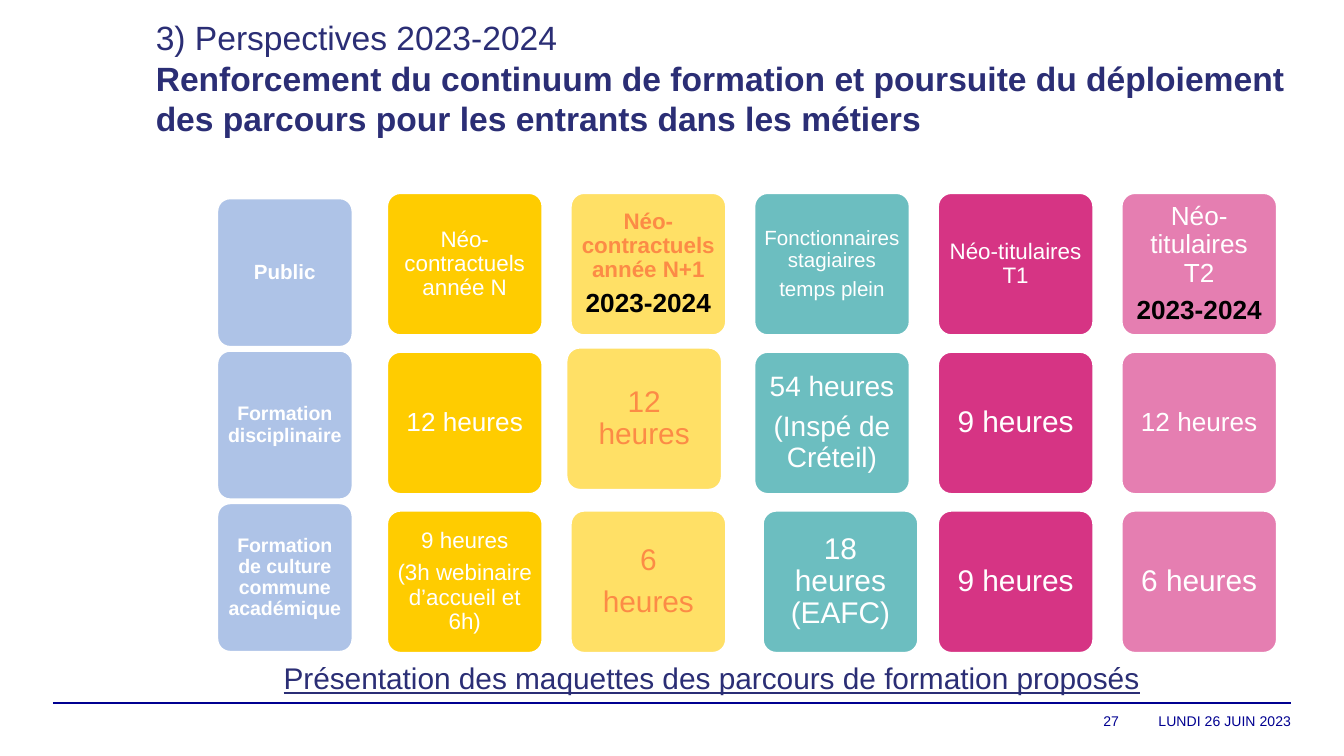
import pptx
import pptx.util
from dataclasses import dataclass
from pptx.dml.color import RGBColor
from pptx.enum.shapes import MSO_CONNECTOR, MSO_SHAPE
from pptx.enum.text import MSO_ANCHOR, MSO_AUTO_SIZE, PP_ALIGN
from pptx.oxml.xmlchemy import OxmlElement
from pptx.util import Cm


@dataclass(frozen=True)
class Theme:
    font: str = "Arial"
    heading: str = "2B2E75"
    footer: str = "000091"
    white: str = "FFFFFF"
    black: str = "000000"
    orange: str = "FC8B46"
    label: str = "AEC3E7"
    title_size: float = 18
    link_size: float = 16
    footer_size: float = 7.5


THEME = Theme()


@dataclass(frozen=True)
class Line:
    text: str
    size: float
    color: str = THEME.white
    bold: bool = False
    underline: bool = False


@dataclass(frozen=True)
class Tile:
    lines: tuple
    shift: tuple = (0, 0)


@dataclass(frozen=True)
class Grid:
    left: float
    top: float
    column_step: float
    row_step: float
    width: float
    height: float


LABEL_GRID = Grid(4.09, 3.73, 0, 2.88, 2.59, 2.84)
TILE_GRID = Grid(7.3, 3.63, 3.47, 3, 2.97, 2.72)


def tile(*lines, shift=(0, 0)):
    return Tile(lines, shift)


LABELS = (
    tile(Line("Public", 11, bold=True)),
    tile(Line("Formation disciplinaire", 10.5, bold=True)),
    tile(Line("Formation de culture commune académique", 10.5, bold=True)),
)

# One entry per audience: fill colour, then the tiles from top to bottom
COLUMNS = (
    ("FFCC00", (
        tile(Line("Néo-contractuels année N", 12)),
        tile(Line("12 heures", 14)),
        tile(Line("9 heures", 12), Line("(3h webinaire d’accueil et 6h)", 12)),
    )),
    ("FFE066", (
        tile(Line("Néo-contractuels année N+1", 12, THEME.orange, True),
             Line("2023-2024", 14, THEME.black, True)),
        tile(Line("12 heures", 16, THEME.orange), shift=(-0.08, -0.08)),
        tile(Line("6", 16, THEME.orange), Line("heures", 16, THEME.orange)),
    )),
    ("6CBEC0", (
        tile(Line("Fonctionnaires stagiaires", 11), Line("temps plein", 11)),
        tile(Line("54 heures", 15), Line("(Inspé de Créteil)", 15)),
        tile(Line("18 heures (EAFC)", 16), shift=(0.16, 0)),
    )),
    ("D63484", (
        tile(Line("Néo-titulaires T1", 12)),
        tile(Line("9 heures", 16)),
        tile(Line("9 heures", 16)),
    )),
    ("E57EB1", (
        tile(Line("Néo-titulaires T2", 14),
             Line("2023-2024", 14, THEME.black, True)),
        tile(Line("12 heures", 14)),
        tile(Line("6 heures", 16)),
    )),
)


def rgb(color):
    return RGBColor.from_string(color)


def write_lines(frame, lines, alignment, line_spacing=1.0, space_ratio=0):
    for index, line in enumerate(lines):
        paragraph = frame.add_paragraph() if index else frame.paragraphs[0]
        paragraph.text = line.text
        paragraph.alignment = alignment
        paragraph.line_spacing = line_spacing
        paragraph.space_after = pptx.util.Pt(space_ratio * line.size)
        font = paragraph.font
        font.name = THEME.font
        font.size = pptx.util.Pt(line.size)
        font.bold = line.bold
        font.underline = line.underline
        font.color.rgb = rgb(line.color)


def set_frame(frame, anchor, inset=None):
    frame.word_wrap = True
    frame.auto_size = MSO_AUTO_SIZE.NONE
    frame.vertical_anchor = anchor
    if inset is not None:
        frame.margin_left = frame.margin_right = inset
        frame.margin_top = frame.margin_bottom = inset


def add_title(slide):
    title = slide.shapes.title
    title.left, title.top = Cm(2.69), Cm(0.2)
    title.width, title.height = Cm(22), Cm(2.57)
    set_frame(title.text_frame, MSO_ANCHOR.TOP)
    write_lines(title.text_frame, (
        Line("3) Perspectives 2023-2024", THEME.title_size, THEME.heading),
        Line("Renforcement du continuum de formation et poursuite du déploiement "
             "des parcours pour les entrants dans les métiers",
             THEME.title_size, THEME.heading, True),
    ), PP_ALIGN.LEFT)


def add_text(slide, box, line, alignment, anchor, inset=None):
    text_box = slide.shapes.add_textbox(*map(Cm, box))
    set_frame(text_box.text_frame, anchor, inset)
    write_lines(text_box.text_frame, (line,), alignment)


def add_rule(slide):
    rule = slide.shapes.add_connector(
        MSO_CONNECTOR.STRAIGHT, Cm(1), Cm(13.28), Cm(24.4), Cm(13.28))
    rule.line.color.rgb = rgb(THEME.footer)
    rule.line.width = pptx.util.Pt(0.8)
    rule._element.spPr.append(OxmlElement("a:effectLst"))


def add_column(slide, grid, column, fill, tiles):
    for row, item in enumerate(tiles):
        left = grid.left + column * grid.column_step + item.shift[0]
        top = grid.top + row * grid.row_step + item.shift[1]
        shape = slide.shapes.add_shape(
            MSO_SHAPE.ROUNDED_RECTANGLE,
            Cm(left), Cm(top), Cm(grid.width), Cm(grid.height))
        shape.adjustments[0] = 0.1
        shape.shadow.inherit = False
        shape.fill.solid()
        shape.fill.fore_color.rgb = rgb(fill)
        shape.line.color.rgb = rgb(THEME.white)
        shape.line.width = pptx.util.Pt(2)
        # The inset grows with the first line's type size
        inset = pptx.util.Pt(0.3 * item.lines[0].size)
        set_frame(shape.text_frame, MSO_ANCHOR.MIDDLE, inset)
        write_lines(shape.text_frame, item.lines, PP_ALIGN.CENTER, 0.9, 0.35)


def main():
    presentation = pptx.Presentation()
    presentation.slide_width, presentation.slide_height = Cm(25.4), Cm(14.28)
    slide = presentation.slides.add_slide(presentation.slide_layouts[5])

    # Footer
    add_rule(slide)
    for text, left, width in (("LUNDI 26 JUIN 2023", 21.15, 3.25), ("27", 17.4, 3.75)):
        add_text(slide, (left, 13.28, width, 0.67),
                 Line(text, THEME.footer_size, THEME.footer),
                 PP_ALIGN.RIGHT, MSO_ANCHOR.MIDDLE, 0)

    # Heading
    add_title(slide)

    # Training hours by audience, then row labels
    for column, (fill, tiles) in enumerate(COLUMNS):
        add_column(slide, TILE_GRID, column, fill, tiles)
    add_column(slide, LABEL_GRID, 0, THEME.label, LABELS)

    # Closing line
    add_text(slide, (5.11, 12.34, 17.6, 1.7),
             Line("Présentation des maquettes des parcours de formation proposés",
                  THEME.link_size, THEME.heading, underline=True),
             PP_ALIGN.LEFT, MSO_ANCHOR.TOP)

    presentation.save("out.pptx")


if __name__ == "__main__":
    main()
